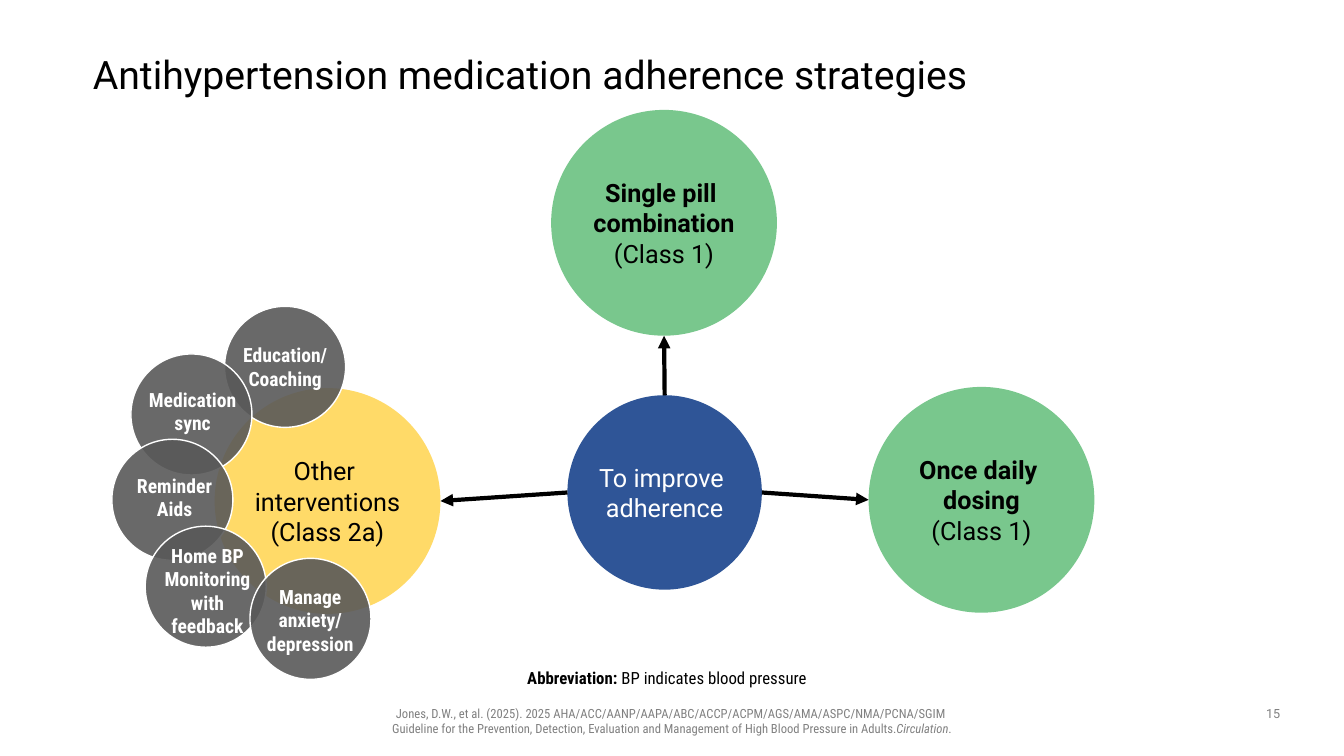
from dataclasses import dataclass

from lxml import etree
from pptx import Presentation
from pptx.dml.color import RGBColor
from pptx.enum.shapes import MSO_CONNECTOR, MSO_SHAPE
from pptx.enum.text import MSO_ANCHOR, PP_ALIGN
from pptx.oxml.ns import qn
from pptx.util import Cm, Pt

ELLIPSE = MSO_SHAPE.OVAL
STRAIGHT = MSO_CONNECTOR.STRAIGHT
TOP, MIDDLE, BOTTOM = MSO_ANCHOR.TOP, MSO_ANCHOR.MIDDLE, MSO_ANCHOR.BOTTOM
LEFT, CENTER = PP_ALIGN.LEFT, PP_ALIGN.CENTER


@dataclass(frozen=True)
class Theme:
    black: str = "000000"
    white: str = "FFFFFF"
    grey: str = "808080"
    green: str = "79C78D"
    yellow: str = "FFDA68"
    blue: str = "2F5597"
    charcoal: str = "595959"
    font: str = "Roboto"
    narrow: str = "Roboto Condensed"
    title: int = 28
    circle: int = 18
    satellite: int = 14
    abbreviation: int = 12
    footer: int = 9


THEME = Theme()

STRATEGY_SIZE = 5.69
HUB_SIZE = 4.9
SATELLITE_SIZE = 3.05
LABEL_HEIGHT = 2.29

# Circle left and top, label left, top and width, label paragraphs
SATELLITES = [
    ((5.66, 7.72), (5.97, 8.1, 2.44), ["Education/Coaching"]),
    ((3.3, 8.92), (3.66, 9.22, 2.39), ["Medication sync"]),
    ((2.82, 11.07), (3.18, 11.38, 2.44), ["Reminder Aids"]),
    ((3.66, 13.26), (3.96, 13.74, 2.54), ["Home BP Monitoring with feedback"]),
    ((6.3, 14.07), (6.6, 14.48, 2.44), ["Manage anxiety/", "depression"]),
]


def rgb(colour):
    return RGBColor.from_string(colour)


def write(frame, paragraphs, *, size, font=THEME.font, colour=THEME.black,
          align=CENTER, anchor=MIDDLE, insets=(0, 0, 0, 0), wrap=True,
          spacing=None):
    """Fill a frame; each paragraph is a list of (text, styles), styles being "b", "i" or ""."""
    frame.word_wrap = wrap
    frame.vertical_anchor = anchor
    (frame.margin_left, frame.margin_top,
     frame.margin_right, frame.margin_bottom) = map(Cm, insets)
    for index, spans in enumerate(paragraphs):
        para = frame.add_paragraph() if index else frame.paragraphs[0]
        para.alignment = align
        if spacing:
            para.line_spacing = spacing
        for text, styles in spans:
            for number, line in enumerate(text.split("\n")):
                if number:
                    para.add_line_break()
                span = para.add_run()
                span.text = line
                span.font.size = Pt(size)
                span.font.name = font
                span.font.color.rgb = rgb(colour)
                span.font.bold = "b" in styles
                span.font.italic = "i" in styles


def add_text(shapes, area, paragraphs, **text_format):
    box = shapes.add_textbox(*map(Cm, area))
    write(box.text_frame, paragraphs, **text_format)


def add_circle(shapes, left, top, size, fill):
    circle = shapes.add_shape(ELLIPSE, Cm(left), Cm(top), Cm(size), Cm(size))
    circle.shadow.inherit = False
    circle.fill.solid()
    circle.fill.fore_color.rgb = rgb(fill)
    circle.line.fill.background()
    return circle


def add_topic(page, left, top, size, fill, paragraphs, colour=THEME.black):
    circle = add_circle(page.shapes, left, top, size, fill)
    write(circle.text_frame, paragraphs, size=THEME.circle, colour=colour,
          insets=(0, 0.13, 0, 0.13), wrap=False)
    return circle


def add_satellite(page, corner, label, lines):
    """Group a translucent outlined circle with its label."""
    group = page.shapes.add_group_shape()
    circle = add_circle(group.shapes, *corner, SATELLITE_SIZE, THEME.charcoal)
    colour = circle.fill._xPr.find(qn("a:solidFill"))[0]
    etree.SubElement(colour, qn("a:alpha"), val="90000")
    circle.line.color.rgb = rgb(THEME.white)
    circle.line.width = Pt(1)
    add_text(group.shapes, (*label, LABEL_HEIGHT),
             [[(line, "b")] for line in lines], size=THEME.satellite,
             font=THEME.narrow, colour=THEME.white, insets=(0.05,) * 4)


def edge(circle, across, down):
    """Point on a circle's frame at the given fractions of its size."""
    return (circle.left + int(circle.width * across),
            circle.top + int(circle.height * down))


def add_arrow(page, start, end):
    arrow = page.shapes.add_connector(STRAIGHT, *start, *end)
    arrow.line.color.rgb = rgb(THEME.black)
    arrow.line.width = Pt(3)
    etree.SubElement(arrow.line._get_or_add_ln(), qn("a:tailEnd"), type="triangle")
    etree.SubElement(arrow._element.spPr, qn("a:effectLst"))


def add_footer(page):
    add_text(page.shapes, (5.99, 17.65, 21.89, 1.02), [[
        ("Jones, D.W., et al. (2025). 2025 AHA/ACC/AANP/AAPA/ABC/ACCP/ACPM/AGS/"
         "AMA/ASPC/NMA/PCNA/SGIM \nGuideline for the Prevention, Detection, "
         "Evaluation and Management of High Blood Pressure in Adults.", ""),
        ("Circulation", "i"), (".", "")]],
        size=THEME.footer, font=THEME.narrow, colour=THEME.grey, anchor=TOP,
        insets=(0.25, 0.13, 0.25, 0.13))
    add_text(page.shapes, (31.55, 17.65, 1.07, 0.66), [[("15", "")]],
             size=THEME.footer, colour=THEME.grey, anchor=TOP,
             insets=(0.25, 0.13, 0.25, 0.13))


def main():
    deck = Presentation()
    deck.slide_width, deck.slide_height = Cm(33.87), Cm(19.05)
    page = deck.slides.add_slide(deck.slide_layouts[6])

    add_footer(page)
    add_text(page.shapes, (2.34, 1.02, 29.21, 1.83),
             [[("Antihypertension medication adherence strategies", "")]],
             size=THEME.title, align=LEFT, spacing=0.9)
    add_text(page.shapes, (4.78, 16.31, 24.31, 1.17),
             [[("Abbreviation: ", "b"), ("BP indicates blood pressure", "")]],
             size=THEME.abbreviation, font=THEME.narrow, anchor=BOTTOM,
             insets=(0, 0.13, 0.25, 0.13), spacing=0.9)

    other = add_topic(page, 5.41, 9.78, STRATEGY_SIZE, THEME.yellow,
                      [[("Other \ninterventions", "")], [("(Class 2a)", "")]])
    for corner, label, lines in SATELLITES:
        add_satellite(page, corner, label, lines)
    single_pill = add_topic(page, 13.89, 2.77, STRATEGY_SIZE, THEME.green,
                            [[("Single pill \ncombination", "b")], [("(Class 1)", "")]])
    hub = add_topic(page, 14.3, 9.96, HUB_SIZE, THEME.blue,
                    [[("To improve \nadherence", "")]], colour=THEME.white)
    once_daily = add_topic(page, 21.89, 9.75, STRATEGY_SIZE, THEME.green,
                           [[("Once daily \ndosing", "b")], [("(Class 1)", "")]])

    add_arrow(page, edge(hub, 0.5, 0), edge(single_pill, 0.5, 1))
    add_arrow(page, edge(hub, 0, 0.5), edge(other, 1, 0.5))
    add_arrow(page, edge(hub, 1, 0.5), edge(once_daily, 0, 0.5))
    deck.save("out.pptx")


if __name__ == "__main__":
    main()
